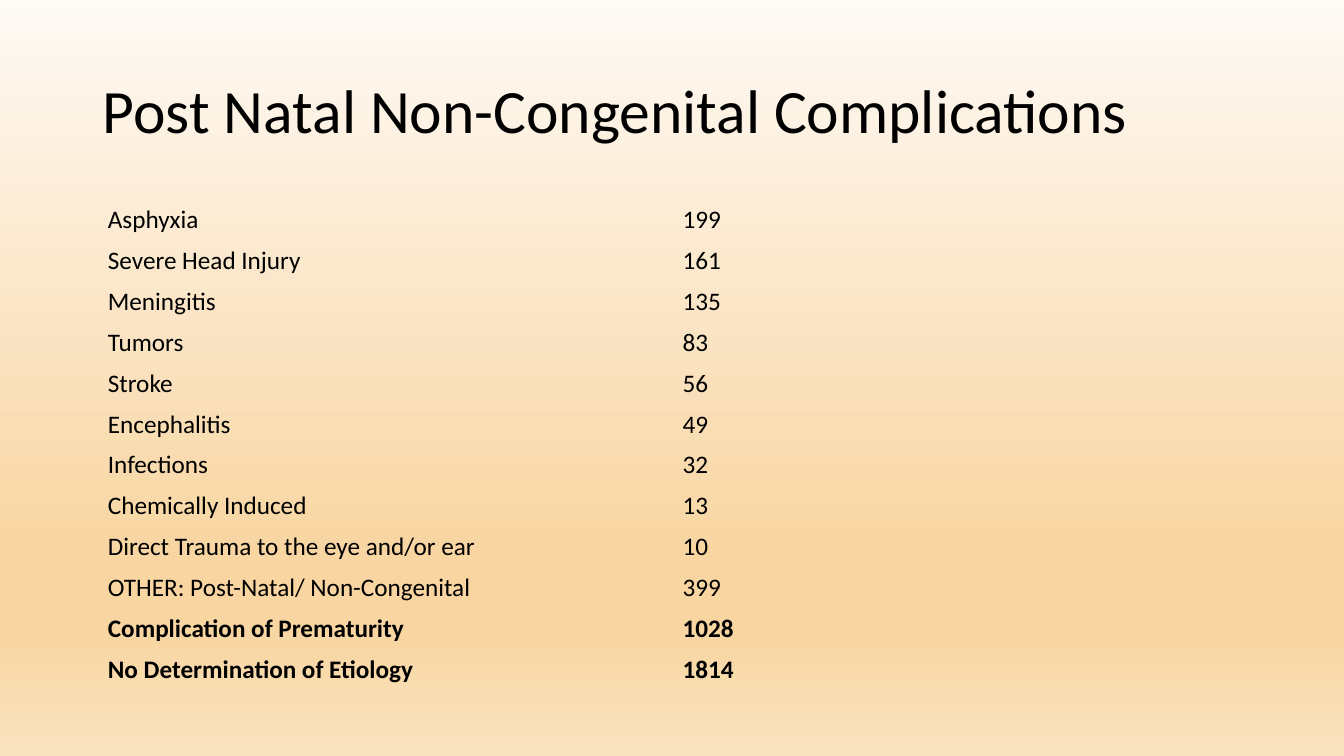
from lxml.etree import SubElement
from pptx import Presentation
from pptx.dml.color import RGBColor
from pptx.enum.text import MSO_ANCHOR, PP_ALIGN
from pptx.oxml.ns import qn
from pptx.util import Inches, Pt

TITLE = "Post Natal Non-Congenital Complications"
CAUSES = [
    ("Asphyxia", 199),
    ("Severe Head Injury", 161),
    ("Meningitis", 135),
    ("Tumors", 83),
    ("Stroke", 56),
    ("Encephalitis", 49),
    ("Infections", 32),
    ("Chemically Induced", 13),
    ("Direct Trauma to the eye and/or ear", 10),
    ("OTHER: Post-Natal/ Non-Congenital", 399),
    ("Complication of Prematurity", 1028),
    ("No Determination of Etiology", 1814),
]
BOLD_ROWS = 2  # the last rows stand out
COLORS = {"text": "000000", "cream": "FEFAF5", "orange": "F8D5A1", "sand": "FAE3C0"}
BACKGROUND = [(0, "cream"), (74, "orange"), (83, "orange"), (100, "sand")]
FONT = "Calibri"
NO_STYLE_NO_GRID = "{2D5ABB26-0587-4C30-8999-92F81FD0307C}"
COL_W, ROW_H = 5.7, 0.4


def add_run(p, text, size, bold=False):
    r = p.add_run()
    r.text = text
    r.font.name = FONT
    r.font.size = Pt(size)
    r.font.bold = bold
    r.font.color.rgb = RGBColor.from_string(COLORS["text"])


def paint_background(s):
    fill = s.background.fill
    fill.gradient()
    fill.gradient_angle = 270
    stops = next(s.element.iter(qn("a:gsLst")))
    for stop in list(stops):
        stops.remove(stop)
    for percent, color in BACKGROUND:
        stop = SubElement(stops, qn("a:gs"), pos=str(percent * 1000))
        SubElement(stop, qn("a:srgbClr"), val=COLORS[color])


def add_title(s):
    title = s.shapes.title
    title.left, title.top = Inches(0.92), Inches(0.4)
    title.width, title.height = Inches(11.5), Inches(1.45)
    tf = title.text_frame
    tf.word_wrap = True
    tf.vertical_anchor = MSO_ANCHOR.MIDDLE
    p = tf.paragraphs[0]
    p.alignment = PP_ALIGN.LEFT
    p.line_spacing = 0.9
    add_run(p, TITLE, 44)


def add_causes(s):
    rows = len(CAUSES)
    frame = s.shapes.add_table(rows, 2, Inches(0.97), Inches(1.98),
                               Inches(2 * COL_W), Inches(rows * ROW_H))
    table = frame.table
    table.first_row = table.horz_banding = False
    next(frame.element.iter(qn("a:tableStyleId"))).text = NO_STYLE_NO_GRID
    for i, cause in enumerate(CAUSES):
        for j, value in enumerate(cause):
            cell = table.cell(i, j)
            cell.fill.background()
            cell.vertical_anchor = MSO_ANCHOR.MIDDLE
            add_run(cell.text_frame.paragraphs[0], str(value), 18,
                    bold=i >= rows - BOLD_ROWS)


def main():
    prs = Presentation()
    prs.slide_width, prs.slide_height = Inches(13.33), Inches(7.5)
    s = prs.slides.add_slide(prs.slide_layouts[5])
    paint_background(s)
    add_title(s)
    add_causes(s)
    prs.save("out.pptx")


if __name__ == "__main__":
    main()
